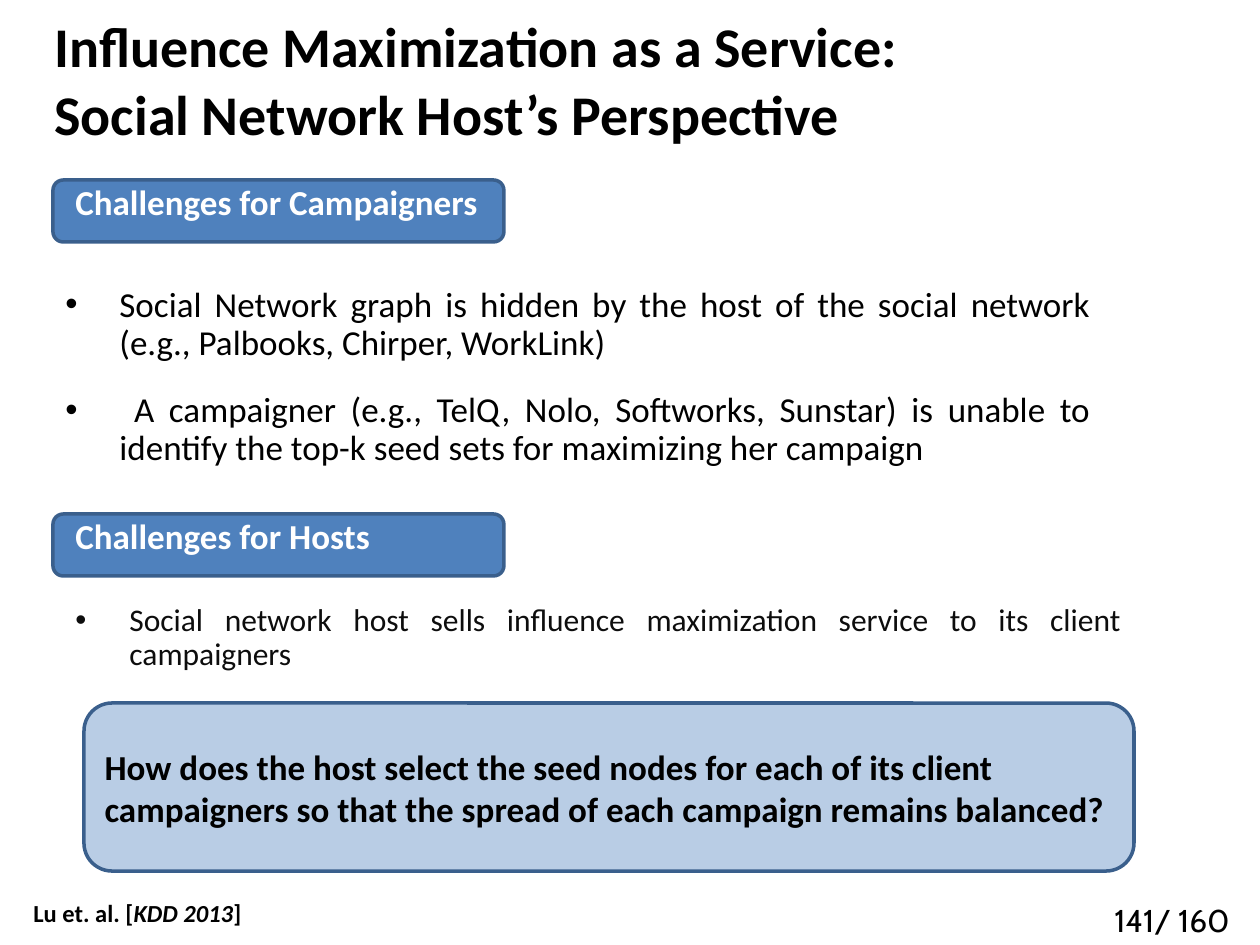
from dataclasses import dataclass

from lxml import etree
from pptx import Presentation
from pptx import util as u
from pptx.dml.color import RGBColor
from pptx.enum import shapes, text
from pptx.oxml.ns import qn

PX = u.Inches(1) / 126
LINE_COLOUR = "3A5F8C"
HEADING_LEFT = 63
HEADING_INDENT = 10


@dataclass
class Area:
    left: int
    top: int
    width: int
    height: int

    def emu(self) -> list[int]:
        return [px(n) for n in (self.left, self.top, self.width, self.height)]


@dataclass
class Style:
    size: int
    colour: str = "000000"
    bold: bool = False
    name: str = "Calibri"


@dataclass
class Section:
    heading: str
    top: int
    bullets_area: Area
    bullets: list[str]
    style: Style
    gap: int = 0


def px(count: int) -> int:
    return round(count * PX)


def rgb(colour: str) -> RGBColor:
    return RGBColor.from_string(colour)


def apply(target, values: dict) -> None:
    for key, value in values.items():
        setattr(target, key, value)


def add_span(para, words: str, style: Style, italic: bool = False) -> None:
    span = para.add_run()
    span.text = words
    apply(span.font, {"size": u.Pt(style.size), "bold": style.bold,
                      "italic": italic, "name": style.name})
    span.font.color.rgb = rgb(style.colour)


def add_box(page, area: Area, anchor=text.MSO_ANCHOR.TOP):
    frame = page.shapes.add_textbox(*area.emu()).text_frame
    apply(frame, {"word_wrap": True, "vertical_anchor": anchor})
    return frame


def add_panel(page, area: Area, fill: str):
    panel = page.shapes.add_shape(shapes.MSO_SHAPE.ROUNDED_RECTANGLE, *area.emu())
    panel.shadow.inherit = False
    panel.fill.solid()
    panel.fill.fore_color.rgb = rgb(fill)
    panel.line.color.rgb = rgb(LINE_COLOUR)
    panel.line.width = u.Pt(2)
    return panel


def add_bullets(page, section: Section) -> None:
    frame = add_box(page, section.bullets_area)
    for index, words in enumerate(section.bullets):
        para = frame.add_paragraph() if index else frame.paragraphs[0]
        apply(para, {"alignment": text.PP_ALIGN.JUSTIFY, "line_spacing": 0.9,
                     "space_before": u.Pt(section.gap if index else 0)})
        props = para._p.get_or_add_pPr()
        props.set("marL", str(px(54)))
        props.set("indent", str(-px(54)))
        etree.SubElement(props, qn("a:buFont")).set("typeface", "Arial")
        etree.SubElement(props, qn("a:buChar")).set("char", "•")
        add_span(para, words, section.style)


def add_section(page, section: Section) -> None:
    add_panel(page, Area(HEADING_LEFT - HEADING_INDENT, section.top, 451, 62), "4F81BD")
    para = add_box(page, Area(HEADING_LEFT, section.top - 1, 504, 86)).paragraphs[0]
    para.line_spacing = 0.9
    add_span(para, section.heading, Style(20, "FFFFFF", True))
    add_bullets(page, section)


def main() -> None:
    deck = Presentation()
    apply(deck, {"slide_width": u.Inches(10), "slide_height": u.Inches(7.5)})
    page = deck.slides.add_slide(deck.slide_layouts[6])

    title = add_box(page, Area(42, 32, 1071, 94), text.MSO_ANCHOR.MIDDLE).paragraphs[0]
    title_style = Style(32, bold=True)
    add_span(title, "Influence Maximization as a Service:", title_style)
    title.add_line_break()
    add_span(title, "Social Network Host’s Perspective", title_style)

    sections = [
        Section("Challenges for Campaigners", 180, Area(53, 281, 1050, 200), [
            "Social Network graph is hidden by the host of the social network "
            "(e.g., Palbooks, Chirper, WorkLink)",
            " A campaigner (e.g., TelQ, Nolo, Softworks, Sunstar) is unable to "
            "identify the top-k seed sets for maximizing her campaign",
        ], Style(20), 17),
        Section("Challenges for Hosts", 514, Area(63, 598, 1071, 121), [
            "Social network host sells influence maximization service to its "
            "client campaigners",
        ], Style(18, "0D0D0D")),
    ]
    for section in sections:
        add_section(page, section)

    question = add_panel(page, Area(84, 703, 1050, 168), "B9CDE5").text_frame
    apply(question, {"word_wrap": True, "vertical_anchor": text.MSO_ANCHOR.MIDDLE})
    para = question.paragraphs[0]
    para.alignment = text.PP_ALIGN.LEFT
    add_span(para, "How does the host select the seed nodes for each of its client "
                   "campaigners so that the spread of each campaign remains balanced?",
             Style(20, bold=True))

    citation = add_box(page, Area(21, 892, 892, 43)).paragraphs[0]
    for words, italic in (("Lu et. al. [", False), ("KDD 2013", True), ("]", False)):
        add_span(citation, words, Style(14, bold=True), italic)

    number = add_box(page, Area(1102, 895, 158, 50)).paragraphs[0]
    add_span(number, "141/ 160", Style(18, name="Cabin"))

    deck.save("out.pptx")


if __name__ == "__main__":
    main()
